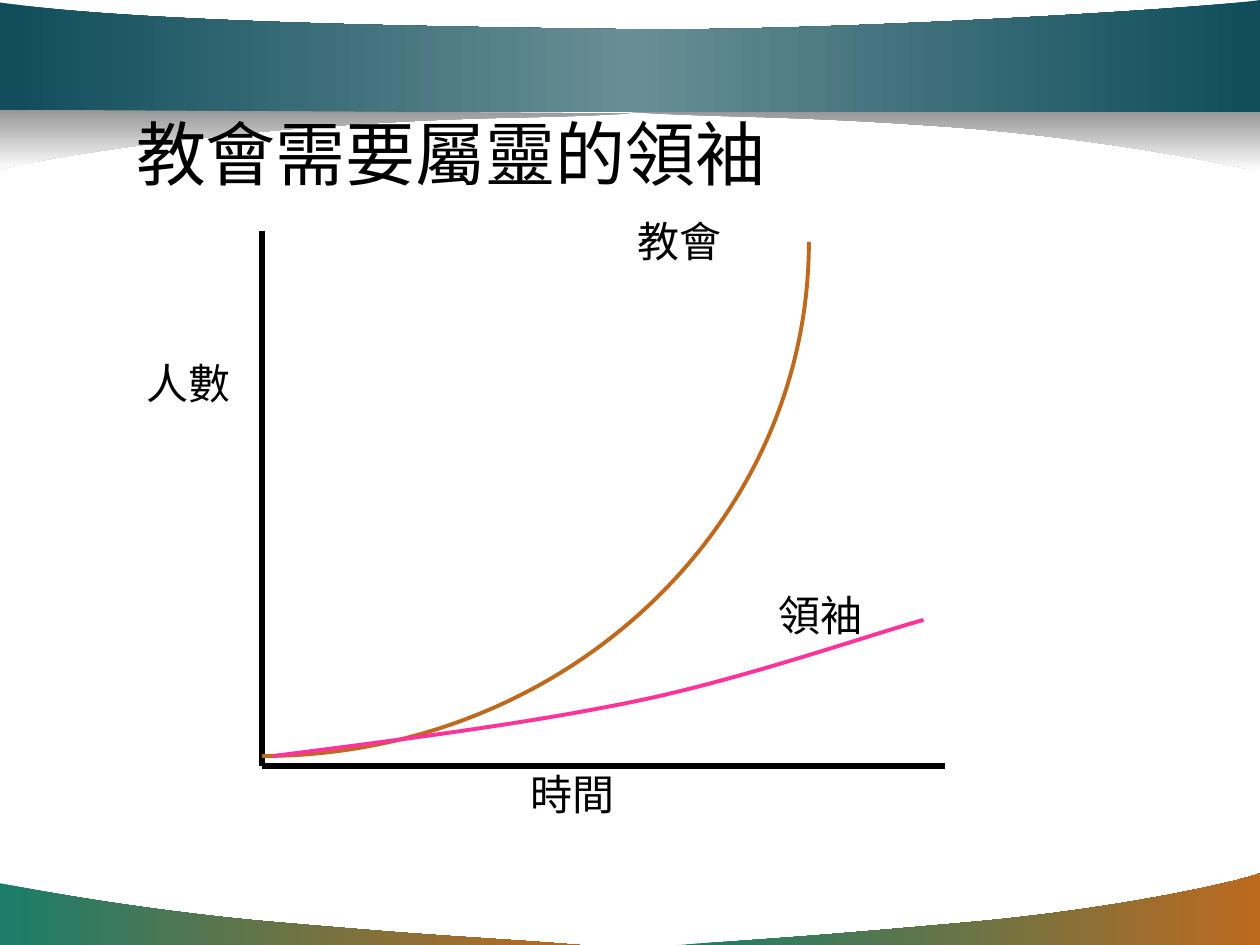
import copy

import pptx
import pptx.dml.color
import pptx.enum.shapes
import pptx.enum.text
import pptx.oxml
import pptx.oxml.ns
import pptx.util

RGBColor = pptx.dml.color.RGBColor
BLACK = RGBColor(0x00, 0x00, 0x00)
WHITE = RGBColor(0xFF, 0xFF, 0xFF)
GREY = RGBColor(0x96, 0x96, 0x96)
TEAL = RGBColor(0x0F, 0x4D, 0x5B)
MIST = RGBColor(0x68, 0x8E, 0x95)
GREEN = RGBColor(0x1B, 0x7D, 0x6A)
ORANGE = RGBColor(0xBD, 0x6A, 0x1F)
PINK = RGBColor(0xFF, 0x33, 0x99)

COLUMNS, ROWS = 10, 7.5


class GrowthSlide:
    font_name = "Arial"
    label_size = 24

    def __init__(self, deck):
        self.column = deck.slide_width / COLUMNS
        self.row = deck.slide_height / ROWS
        self.slide = deck.slides.add_slide(deck.slide_layouts[6])
        self.shapes = self.slide.shapes

    def place(self, column, row):
        return round(column * self.column), round(row * self.row)

    def outline(self, start, segments, closed):
        points = [self.place(*point) for segment in segments for point in segment]
        builder = self.shapes.build_freeform(*self.place(*start))
        builder.add_line_segments(points, close=closed)
        shape = builder.convert_to_shape()
        shape.shadow.inherit = False
        qn = pptx.oxml.ns.qn
        steps = iter(list(shape._element.iter(qn("a:lnTo"))))
        for segment in segments:
            parts = [next(steps) for _ in segment]
            if len(parts) == 3:
                curve = pptx.oxml.parse_xml(
                    f'<a:cubicBezTo {pptx.oxml.ns.nsdecls("a")}/>'
                )
                parts[0].addprevious(curve)
                for part in parts:
                    curve.append(part[0])
                    part.getparent().remove(part)
        return shape

    def band(self, start, segments, colors, angle=0):
        shape = self.outline(start, segments, True)
        shape.line.fill.background()
        shape.fill.gradient()
        shape.fill.gradient_angle = angle
        stops = shape.fill.gradient_stops
        if len(colors) == 3:
            first = stops[0]._gs
            first.addnext(copy.deepcopy(first))
            stops = shape.fill.gradient_stops
        for index, (stop, color) in enumerate(zip(stops, colors)):
            stop.position = index / (len(colors) - 1)
            stop.color.rgb = color

    def curve(self, start, segments, color):
        shape = self.outline(start, segments, False)
        shape.fill.background()
        shape.line.color.rgb = color
        shape.line.width = pptx.util.Pt(2.25)

    def axis(self, start, end):
        line = self.shapes.add_connector(
            pptx.enum.shapes.MSO_CONNECTOR.STRAIGHT,
            *self.place(*start), *self.place(*end),
        )
        line.line.color.rgb = BLACK
        line.line.width = pptx.util.Pt(3)
        line._element.spPr.append(
            pptx.oxml.parse_xml(f'<a:effectLst {pptx.oxml.ns.nsdecls("a")}/>')
        )

    def label(self, text, left, middle, width=1, height=0.5, size=label_size):
        box = self.shapes.add_textbox(
            *self.place(left, middle - height / 2), *self.place(width, height)
        )
        frame = box.text_frame
        frame.word_wrap = True
        frame.margin_left = frame.margin_right = 0
        frame.margin_top = frame.margin_bottom = 0
        frame.vertical_anchor = pptx.enum.text.MSO_ANCHOR.MIDDLE
        run = frame.paragraphs[0].add_run()
        run.text = text
        run.font.name = self.font_name
        run.font.size = pptx.util.Pt(size)
        run.font.color.rgb = BLACK


def main():
    deck = pptx.Presentation()
    deck.slide_width = pptx.util.Inches(10)
    deck.slide_height = pptx.util.Inches(7.5)
    growth = GrowthSlide(deck)

    growth.band((4.6, 7.5), [
        [(3.84, 7.44), (3.58, 7.44), (2.32, 7.33)],
        [(1.06, 7.23), (0.01, 7.01), (0, 7.01)],
        [(0, 7.5)],
    ], [GREEN, ORANGE])
    growth.band((5.39, 7.5), [
        [(6.14, 7.45), (6.46, 7.43), (7.69, 7.32)],
        [(8.92, 7.21), (9.9, 6.98), (10, 6.93)],
        [(10, 7.5)],
    ], [GREEN, ORANGE])
    growth.band((5, 0.89), [
        [(5.84, 0.94), (6.2, 0.91), (7.58, 1.01)],
        [(8.97, 1.12), (9.98, 1.36), (10, 1.36)],
        [(10, 0.88)],
    ], [GREY, WHITE], 270)
    growth.band((0, 0.89), [
        [(10, 0.89)],
        [(10, 0)],
        [(9.64, 0.06), (6.53, 0.26), (4.87, 0.23)],
        [(3.21, 0.21), (1.01, 0.17), (0, 0.02)],
    ], [TEAL, MIST, TEAL])
    growth.band((5, 0.9), [
        [(4.16, 0.95), (3.88, 0.91), (2.49, 1.01)],
        [(1.1, 1.12), (0.11, 1.3), (0, 1.35)],
        [(0, 0.87)],
    ], [GREY, WHITE], 270)

    growth.label("教會需要屬靈的領袖", 1.08, 1.21, width=7.6, height=0.8, size=40)
    for text, left, middle in [
        ("教會", 5.06, 1.91),
        ("人數", 1.16, 3.04),
        ("領袖", 6.18, 4.88),
        ("時間", 4.21, 6.3),
    ]:
        growth.label(text, left, middle)

    origin = (2.08, 6.08)
    growth.axis((2.08, 1.83), origin)
    growth.axis(origin, (7.5, 6.08))
    growth.curve((2.08, 6), [[(4.48, 6), (6.42, 4.17), (6.42, 1.92)]], ORANGE)
    growth.curve((2.17, 6), [
        [(3.19, 5.87), (4.21, 5.74), (5.07, 5.56)],
        [(5.93, 5.38), (6.96, 5.02), (7.33, 4.92)],
    ], PINK)

    deck.save("out.pptx")


if __name__ == "__main__":
    main()
